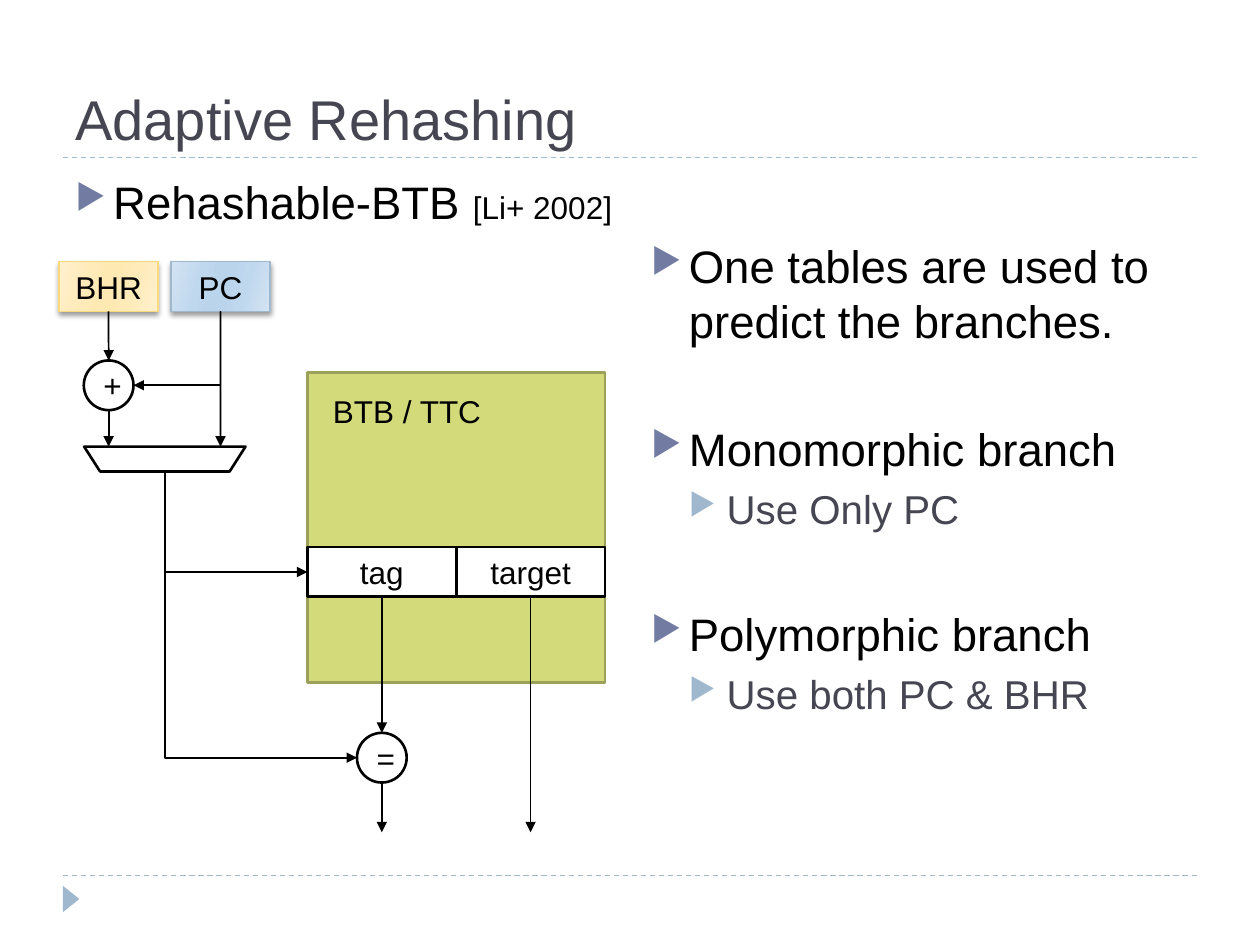
"""Build the Adaptive Rehashing slide with its branch predictor diagram."""
from lxml import etree
from pptx import Presentation
from pptx import util as u
from pptx.dml import color
from pptx.enum import dml, shapes, text
from pptx.oxml import ns

Pt = u.Pt
COLORS = {
    "black": "000000", "white": "FFFFFF", "heading": "464653",
    "bullet": "727CA3", "accent": "9FB8CD", "table": "D2DA7A",
    "table_line": "9BA15A", "history_line": "FADA7A",
}
GRADIENTS = {
    "BHR": ["FFF0CF", "FFEBBA", "FFE9B3"],
    "PC": ["D3E3F2", "C0D8EE", "BAD4EC"],
}
RGB = {name: color.RGBColor.from_string(value) for name, value in COLORS.items()}


def add_xml(parent, tag, **attributes):
    return etree.SubElement(parent, ns.qn(tag), attributes)


def add_run(paragraph, words, size, tint="black"):
    run = paragraph.add_run()
    run.text = words
    run.font.size = Pt(size)
    run.font.name = "Arial"
    run.font.color.rgb = RGB[tint]


presentation = Presentation()
presentation.slide_width, presentation.slide_height = Pt(720), Pt(540)
slide = presentation.slides.add_slide(presentation.slide_layouts[6])

for y in (500.4, 90):
    rule = slide.shapes.add_connector(shapes.MSO_CONNECTOR.STRAIGHT, Pt(36), Pt(y), Pt(684), Pt(y))
    rule.line.color.rgb = RGB["accent"]
    rule.line.width = Pt(0.75)
    rule.line.dash_style = dml.MSO_LINE.DASH
    add_xml(rule._element.spPr, "a:effectLst")

marker = slide.shapes.add_shape(
    shapes.MSO_SHAPE.ISOSCELES_TRIANGLE, Pt(33.1), Pt(509), Pt(15.1), Pt(9.4))
marker.rotation = 90
marker.shadow.inherit = False
marker.fill.solid()
marker.fill.fore_color.rgb = RGB["accent"]
marker.line.fill.background()

title = slide.shapes.add_textbox(Pt(36), Pt(18), Pt(648), Pt(72)).text_frame
title.word_wrap = True
title.vertical_anchor = text.MSO_ANCHOR.BOTTOM
add_run(title.paragraphs[0], "Adaptive Rehashing", 32, "heading")

lists = [
    ((36, 95.8, 359.3, 388.8), [
        (0, 0, [("Rehashable-BTB ", 26), ("[Li+ 2002]", 18)]),
    ]),
    ((365, 132.5, 335.5, 352), [
        (0, 0, [("One tables are used to predict the branches.", 26)]),
        (0, 42, [("Monomorphic branch", 26)]),
        (1, 5, [("Use Only PC", 23)]),
        (0, 42, [("Polymorphic branch", 26)]),
        (1, 5, [("Use both PC & BHR", 23)]),
    ]),
]
for box, items in lists:
    frame = slide.shapes.add_textbox(*map(Pt, box)).text_frame
    frame.word_wrap = True
    for index, (level, space, runs) in enumerate(items):
        paragraph = frame.add_paragraph() if index else frame.paragraphs[0]
        paragraph.level = level
        paragraph.space_before = Pt(space)
        properties = paragraph._p.get_or_add_pPr()
        properties.set("marL", str(Pt(21.6 * (level + 1))))
        properties.set("indent", str(Pt(-21.6)))
        bullet_color = add_xml(properties, "a:buClr")
        add_xml(bullet_color, "a:srgbClr", val=COLORS["accent" if level else "bullet"])
        add_xml(properties, "a:buSzPct", val="76000")
        add_xml(properties, "a:buChar", char="▶")
        for words, size in runs:
            add_run(paragraph, words, size, "heading" if level else "black")

RECTANGLE, OVAL = shapes.MSO_SHAPE.RECTANGLE, shapes.MSO_SHAPE.OVAL
blocks = [
    ("BTB", RECTANGLE, (175.7, 213, 170, 177.2), "table", "table_line", 1.5),
    ("BHR", RECTANGLE, (33.7, 149.5, 56.7, 28.4), None, "history_line", 0.75),
    ("PC", RECTANGLE, (97.7, 149.5, 56.7, 28.4), None, "accent", 0.75),
    ("+", OVAL, (47.9, 206, 28.4, 28.4), "white", "black", 1.5),
    ("selector", shapes.MSO_SHAPE.TRAPEZOID, (48.1, 255.2, 92.2, 14.2), "white", "black", 1.5),
    ("target", RECTANGLE, (260.7, 312.7, 85, 28.4), "white", "black", 1.5),
    ("tag", RECTANGLE, (175.7, 312.7, 85, 28.4), "white", "black", 1.5),
    ("=", OVAL, (204, 418.8, 28.4, 28.4), "white", "black", 1.5),
]
parts = {}
for name, kind, box, fill, outline, width in blocks:
    shape = parts[name] = slide.shapes.add_shape(kind, *map(Pt, box))
    shape.shadow.inherit = False
    shape.line.color.rgb = RGB[outline]
    shape.line.width = Pt(width)
    if fill:
        shape.fill.solid()
        shape.fill.fore_color.rgb = RGB[fill]
    else:
        shape.fill.gradient()
        shape.fill.gradient_angle = 344
        stops = shape._element.spPr.find(".//" + ns.qn("a:gsLst"))
        stops.clear()
        tints = GRADIENTS[name]
        for position, tint in zip((0, 30, 45, 55, 73, 100), tints + tints[::-1]):
            stop = add_xml(stops, "a:gs", pos=str(position * 1000))
            add_xml(stop, "a:srgbClr", val=tint)
        effects = shape._element.spPr.find(ns.qn("a:effectLst"))
        shadow = add_xml(effects, "a:outerShdw", blurRad=str(Pt(3)), dist=str(Pt(2)),
                         dir="5400000", rotWithShape="0")
        shadow_color = add_xml(shadow, "a:srgbClr", val=COLORS["black"])
        add_xml(shadow_color, "a:alpha", val="40000")
    if name == "selector":
        shape.rotation = 180
        shape.adjustments[0] = 0.64
    elif name != "BTB":
        shape.text_frame.vertical_anchor = text.MSO_ANCHOR.MIDDLE
        paragraph = shape.text_frame.paragraphs[0]
        paragraph.alignment = text.PP_ALIGN.CENTER
        add_run(paragraph, name, 18)

caption = slide.shapes.add_textbox(Pt(175.7), Pt(220.3), Pt(113.8), Pt(28.8)).text_frame
caption.word_wrap = True
caption.paragraphs[0].alignment = text.PP_ALIGN.CENTER
add_run(caption.paragraphs[0], "BTB / TTC", 18)

STRAIGHT, ELBOW = shapes.MSO_CONNECTOR.STRAIGHT, shapes.MSO_CONNECTOR.ELBOW
arrows = [
    (STRAIGHT, (62.1, 177.9, 62.1, 206), ("BHR", 2), None),
    (STRAIGHT, (62.1, 234.4, 62.1, 255.2), None, None),
    (STRAIGHT, (126, 177.9, 126, 255.2), ("PC", 2), None),
    (STRAIGHT, (218.2, 341.1, 218.2, 418.8), ("tag", 2), None),
    (STRAIGHT, (218.2, 447.2, 218.2, 475.6), None, None),
    (STRAIGHT, (303.2, 341.1, 303.2, 475.6), ("target", 2), None),
    (ELBOW, (76.3, 220.2, 126, 177.9), None, ("PC", 2)),
    (ELBOW, (175.7, 326.9, 94.2, 269.4), ("tag", 1), None),
    (ELBOW, (204, 433, 94.2, 269.4), None, None),
]
for kind, ends, start, finish in arrows:
    arrow = slide.shapes.add_connector(kind, *map(Pt, ends))
    if start:
        arrow.begin_connect(parts[start[0]], start[1])
    if finish:
        arrow.end_connect(parts[finish[0]], finish[1])
    arrow.line.color.rgb = RGB["black"]
    arrow.line.width = Pt(1)
    if kind == ELBOW:
        arrow._element.spPr.find(ns.qn("a:prstGeom")).set("prst", "bentConnector2")
    tip = "a:headEnd" if kind == ELBOW else "a:tailEnd"
    add_xml(arrow.line._get_or_add_ln(), tip, type="triangle")
    add_xml(arrow._element.spPr, "a:effectLst")

presentation.save("out.pptx")
